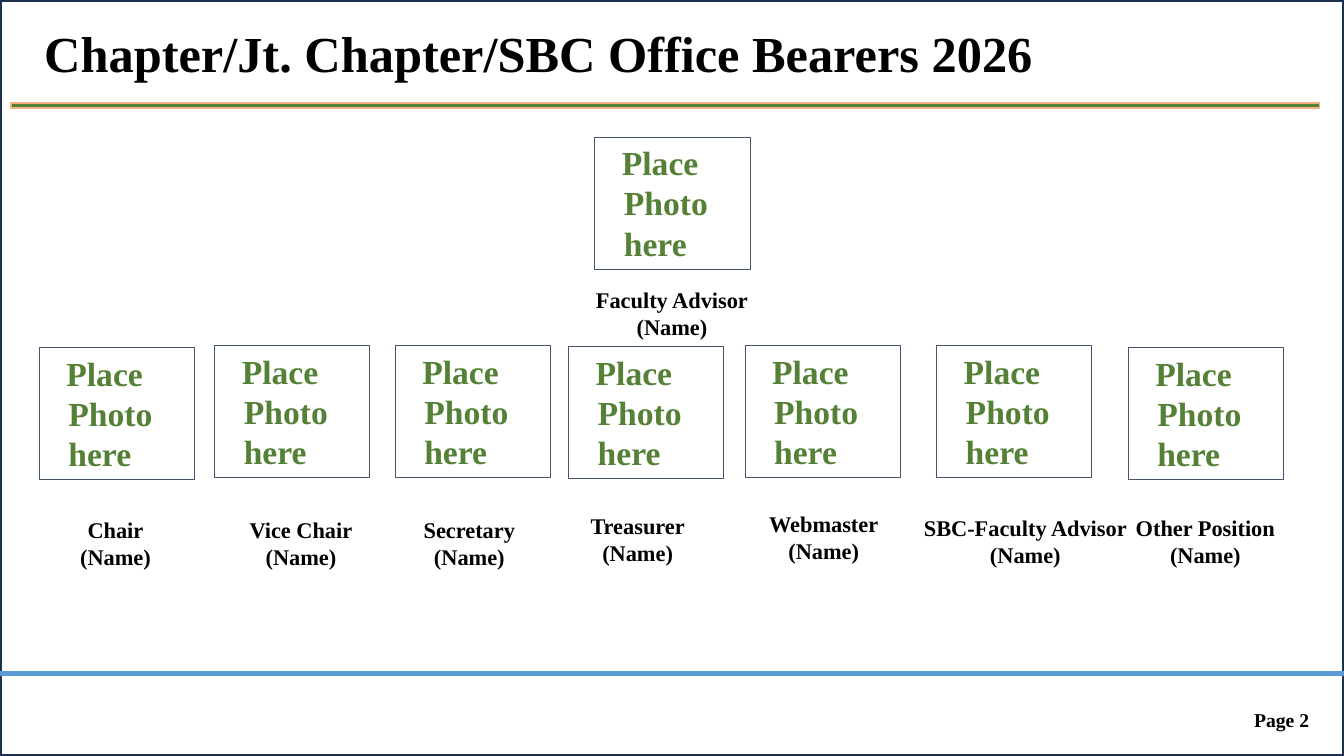
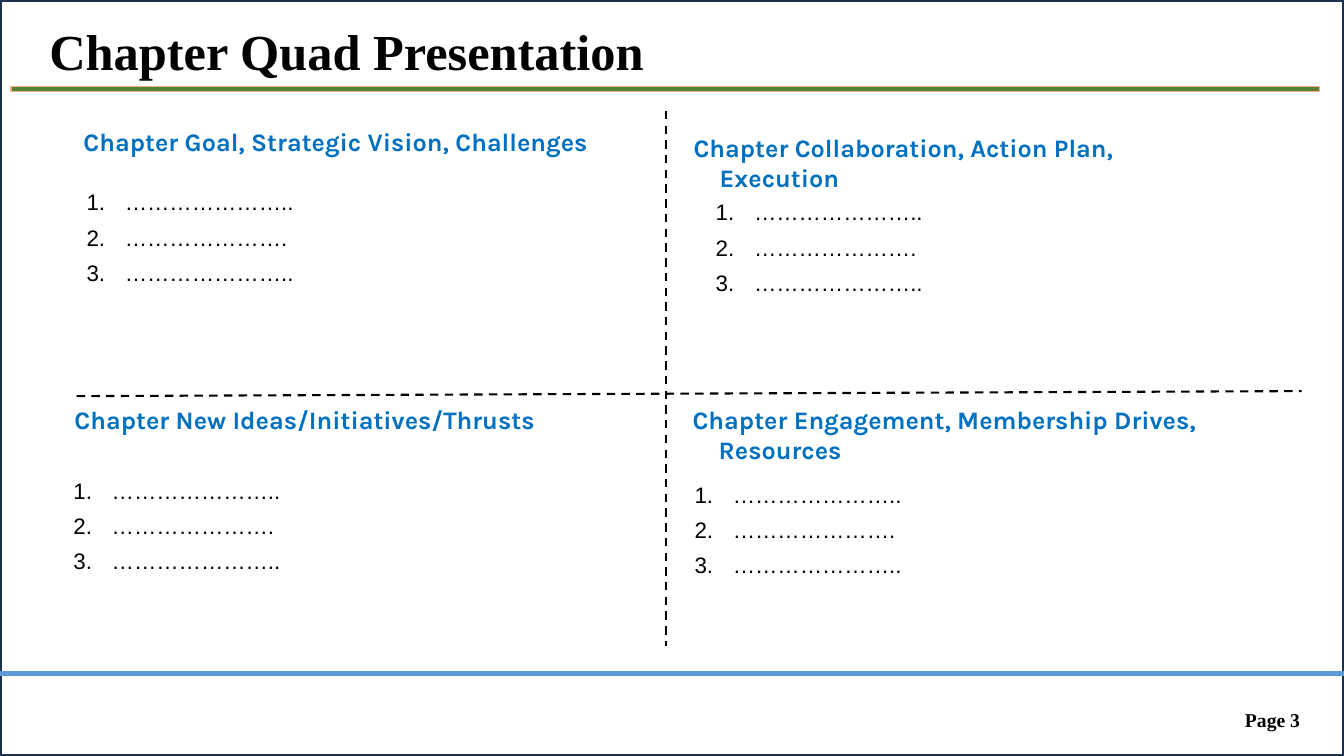
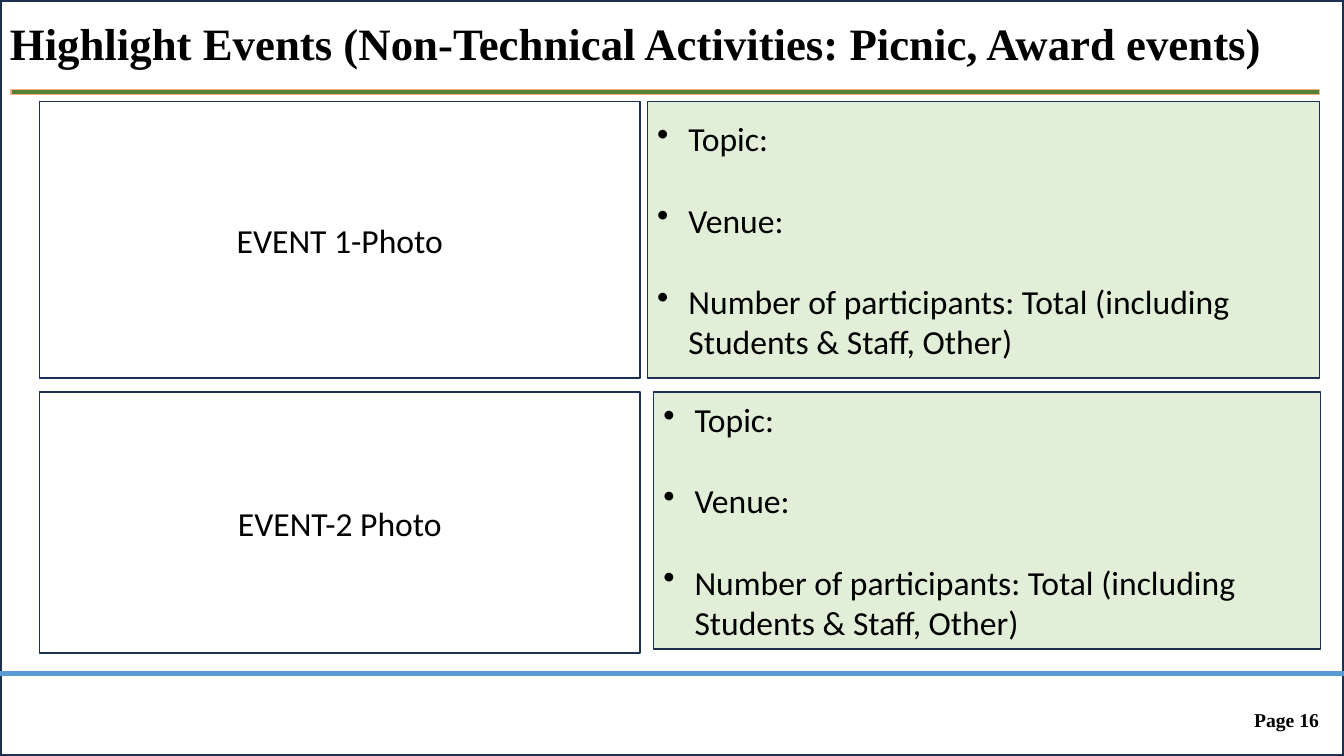
import pptx
import pptx.util
import pptx.dml.color
import pptx.enum.dml
import pptx.enum.shapes
import pptx.enum.text
import pptx.oxml.ns
from lxml import etree

PX = 9144  # 100 px to the inch
WIDTH, HEIGHT = 1333, 750

COLOURS = {
    "ink": "000000",
    "frame": "1C3052",
    "footer": "5B9BD5",
    "green": "548135",
    "orange": "F4B081",
    "slate": "44546A",
    "heading": "0070C0",
    "mint": "E1EFD8",
}

ALIGN = pptx.enum.text.PP_ALIGN
SERIF = {"name": "Times New Roman", "bold": True}
STYLES = {
    "title": {"font": {**SERIF, "size": 36}},
    "long title": {"font": {**SERIF, "size": 32}},
    "page number": {"font": {**SERIF, "size": 14}},
    "photo": {
        "font": {**SERIF, "size": 24}, "colour": "green",
        "para": {"alignment": ALIGN.JUSTIFY}, "indent": (19, -2),
    },
    "caption": {"font": {**SERIF, "size": 16}, "para": {"alignment": ALIGN.CENTER}},
    "heading": {
        "font": {"name": "Karla", "bold": True, "size": 18},
        "colour": "heading", "indent": (26, -26),
    },
    "numbered": {
        "font": {"name": "Arial", "size": 16},
        "para": {"alignment": ALIGN.JUSTIFY, "space_after": pptx.util.Pt(6)},
        "indent": (38, -38), "bullet": ("buAutoNum", {"type": "arabicPeriod"}),
    },
    "event photo": {
        "font": {"name": "Calibri", "size": 24}, "para": {"alignment": ALIGN.CENTER},
    },
    "event detail": {
        "font": {"name": "Calibri", "size": 24}, "indent": (31, -31),
        "bullet": ("buChar", {"char": "•"}), "gap": 29.3,
    },
}

# role, photo left and top, caption offset from the photo, caption width
OFFICERS = [
    ("Faculty Advisor", 590, 136, -89, 143, 331),
    ("Chair", 39, 345, 28, 162, 95),
    ("Vice Chair", 213, 343, 5, 164, 161),
    ("Secretary", 392, 343, -7, 164, 161),
    ("Treasurer", 564, 344, -43, 159, 223),
    ("Webmaster", 739, 343, -5, 158, 166),
    ("SBC-Faculty Advisor", 929, 343, -29, 162, 234),
    ("Other Position", 1119, 345, -4, 160, 161),
]

# heading, its left, top and width, offset of the list from it
QUADRANTS = [
    ("Chapter Goal, Strategic Vision, Challenges", 73, 120, 597, 3, 62),
    ("Chapter New Ideas/Initiatives/Thrusts", 64, 396, 563, -1, 72),
    ("Chapter Collaboration, Action Plan, Execution", 678, 126, 558, 22, 66),
    ("Chapter Engagement, Membership Drives, Resources", 677, 396, 615, 2, 76),
]
BLANK_ITEMS = ["…………………..", "………………….", "………………….."]

# photo label, top, photo height, detail left, detail width, detail height
EVENTS = [
    ("EVENT 1-Photo", 101, 274, 642, 667, 274),
    ("EVENT-2 Photo", 389, 259, 648, 662, 255),
]
EVENT_DETAILS = [
    "Topic:",
    "Venue:",
    "Number of participants: Total (including Students & Staff, Other)",
]


def emu(*lengths):
    return [pptx.util.Emu(length * PX) for length in lengths]


def colour(name):
    return pptx.dml.color.RGBColor.from_string(COLOURS[name])


def set_all(target, values):
    for name, value in values.items():
        setattr(target, name, value)


def write(shape, lines, style_name, anchor=pptx.enum.text.MSO_ANCHOR.TOP):
    """Fill a shape with one paragraph per line in the named style."""
    style = STYLES[style_name]
    frame = shape.text_frame
    left, top = emu(10, 5)
    set_all(frame, {
        "word_wrap": True, "vertical_anchor": anchor,
        "margin_left": left, "margin_right": left,
        "margin_top": top, "margin_bottom": top,
    })
    for index, line in enumerate(lines):
        para = frame.add_paragraph() if index else frame.paragraphs[0]
        properties = para._p.get_or_add_pPr()
        if "indent" in style:
            margin, indent = emu(*style["indent"])
            properties.set("marL", str(margin))
            properties.set("indent", str(indent))
        if "bullet" in style:
            tag, attributes = style["bullet"]
            etree.SubElement(properties, pptx.oxml.ns.qn("a:" + tag), attributes)
        set_all(para, {"alignment": ALIGN.LEFT, **style.get("para", {})})
        if index and "gap" in style:
            para.space_before = pptx.util.Pt(style["gap"])
        span = para.add_run()
        span.text = line
        set_all(span.font, {**style["font"], "size": pptx.util.Pt(style["font"]["size"])})
        span.font.color.rgb = colour(style.get("colour", "ink"))


def text(page, box, lines, style_name):
    write(page.shapes.add_textbox(*emu(*box)), lines, style_name)


def rectangle(page, box, line, weight, fill=None):
    shape = page.shapes.add_shape(
        pptx.enum.shapes.MSO_SHAPE.RECTANGLE, *emu(*box))
    shape.shadow.inherit = False
    if fill:
        shape.fill.solid()
        shape.fill.fore_color.rgb = colour(fill)
    else:
        shape.fill.background()
    shape.line.color.rgb = colour(line)
    shape.line.width = pptx.util.Pt(weight)
    return shape


def rule(page, ends, line, weight, dash=None):
    connector = page.shapes.add_connector(
        pptx.enum.shapes.MSO_CONNECTOR.STRAIGHT, *emu(*ends))
    connector.line.color.rgb = colour(line)
    set_all(connector.line, {"width": pptx.util.Pt(weight), "dash_style": dash})
    etree.SubElement(connector._element.spPr, pptx.oxml.ns.qn("a:effectLst"))


def start_page(deck, title, title_box, bar_top, number, number_left, style="title"):
    """Add a slide with the shared frame, footer, title and title bar."""
    page = deck.slides.add_slide(deck.slide_layouts[6])
    rectangle(page, (0, 0, WIDTH, HEIGHT), "frame", 2.25)
    rule(page, (0, 668, WIDTH, 668), "footer", 3.5)
    text(page, (number_left, 697, 90, 34), [f"Page {number}"], "page number")
    text(page, title_box, [title], style)
    rectangle(page, (11, bar_top, 1298, 5), "orange", 1, "green")
    return page


def officer(page, role, left, top, caption_x, caption_y, caption_width):
    photo = rectangle(page, (left, top, 154, 131), "slate", 0.75)
    write(photo, ["Place Photo here"], "photo")
    caption_box = (left + caption_x, top + caption_y, caption_width, 64)
    text(page, caption_box, [role, "(Name)"], "caption")


def quadrant(page, heading, left, top, width, list_x, list_y):
    text(page, (left, top, width, 40), [heading], "heading")
    text(page, (left + list_x, top + list_y, 575, 108), BLANK_ITEMS, "numbered")


def event(page, label, top, photo_height, detail_left, detail_width, detail_height):
    middle = pptx.enum.text.MSO_ANCHOR.MIDDLE
    photo = rectangle(page, (39, top, 596, photo_height), "frame", 1)
    write(photo, [label], "event photo", middle)
    detail_box = (detail_left, top, detail_width, detail_height)
    detail = rectangle(page, detail_box, "frame", 1, "mint")
    write(detail, EVENT_DETAILS, "event detail", middle)


def office_bearers(deck):
    page = start_page(deck, "Chapter/Jt. Chapter/SBC Office Bearers 2026",
                      (34, 17, 1196, 71), 102, 2, 1234)
    for entry in OFFICERS:
        officer(page, *entry)


def quad_presentation(deck):
    page = start_page(deck, "Chapter Quad Presentation",
                      (39, 15, 1282, 71), 86, 3, 1225)
    dash = pptx.enum.dml.MSO_LINE.DASH
    for ends in [(76, 393, 1291, 388), (661, 110, 661, 641)]:
        rule(page, ends, "ink", 1.5, dash)
    for entry in QUADRANTS:
        quadrant(page, *entry)


def highlight_events(deck):
    title = "Highlight Events (Non-Technical Activities: Picnic, Award events)"
    page = start_page(deck, title, (0, 11, WIDTH, 64), 89, 16, 1234, "long title")
    for entry in EVENTS:
        event(page, *entry)


def main():
    deck = pptx.Presentation()
    deck.slide_width, deck.slide_height = emu(WIDTH, HEIGHT)
    office_bearers(deck)
    quad_presentation(deck)
    highlight_events(deck)
    deck.save("out.pptx")


if __name__ == "__main__":
    main()
